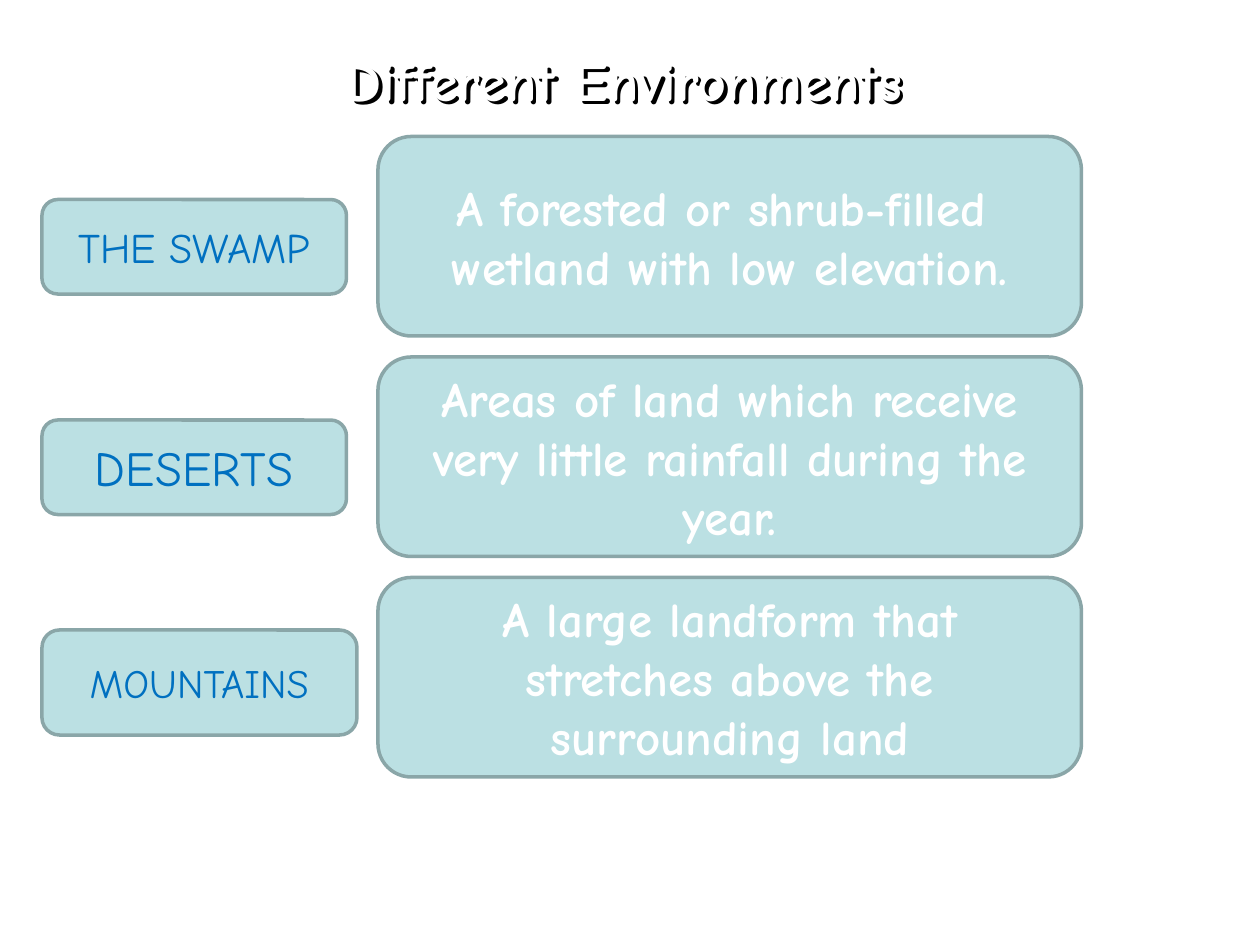
from typing import NamedTuple

from lxml.etree import SubElement
from pptx import Presentation
from pptx.dml.color import RGBColor
from pptx.enum.shapes import MSO_SHAPE as Shape
from pptx.enum.text import MSO_ANCHOR as Anchor, PP_ALIGN as Align
from pptx.oxml.ns import qn
from pptx.util import Pt

FONT = "Comic Neue"
WHITE, BLACK, BLUE, TEAL, EDGE = "FFFFFF", "000000", "0070C0", "BBE0E3", "8AA6A8"
CARD_TOP, CARD_STEP = 78, 126


class Environment(NamedTuple):
    name: str
    size: float
    top: float
    width: float
    height: float
    lines: list[str]


ENVIRONMENTS = [
    Environment("THE SWAMP", 24, 114, 174, 54,
                ["A forested or shrub-filled ", "wetland with low elevation."]),
    Environment("DESERTS", 28, 240, 174, 54,
                ["Areas of land which receive very little rainfall during the year."]),
    Environment("MOUNTAINS", 23, 360, 180, 60,
                ["A large landform that stretches above the surrounding land"]),
]


def rgb(value: str) -> RGBColor:
    return RGBColor.from_string(value)


def add_text(p, text: str, *, size: float, color: str, bold: bool = False) -> None:
    p.alignment = Align.CENTER
    r = p.add_run()
    r.text = text
    r.font.name = FONT
    r.font.size = Pt(size)
    r.font.bold = bold
    r.font.color.rgb = rgb(color)


def add_shadow(sp, color: str, distance: float) -> None:
    sp.fill.background()
    sp.shadow.inherit = False
    effects = sp.element.spPr.find(qn("a:effectLst"))
    outer = SubElement(effects, qn("a:outerShdw"), dist=str(Pt(distance)),
                       dir="2700000", algn="ctr", rotWithShape="0")
    SubElement(outer, qn("a:srgbClr"), val=color)


def add_box(s, left: float, top: float, width: float, height: float,
            lines: list[str], **text_format) -> None:
    sp = s.shapes.add_shape(Shape.ROUNDED_RECTANGLE, Pt(left), Pt(top),
                            Pt(width), Pt(height))
    sp.shadow.inherit = False
    sp.fill.solid()
    sp.fill.fore_color.rgb = rgb(TEAL)
    sp.line.color.rgb = rgb(EDGE)
    sp.line.width = Pt(2)
    tf = sp.text_frame
    tf.word_wrap = True
    tf.vertical_anchor = Anchor.MIDDLE
    for i, line in enumerate(lines):
        p = tf.add_paragraph() if i else tf.paragraphs[0]
        add_text(p, line, **text_format)


def add_title(s, text: str) -> None:
    sp = s.shapes.title
    sp.left, sp.top, sp.width, sp.height = Pt(12), Pt(18), Pt(690), Pt(54)
    add_shadow(sp, BLACK, 2.8)
    tf = sp.text_frame
    tf.vertical_anchor = Anchor.MIDDLE
    add_text(tf.paragraphs[0], text, size=32, color=WHITE, bold=True)


def main() -> None:
    prs = Presentation()
    prs.slide_width, prs.slide_height = Pt(720), Pt(540)
    s = prs.slides.add_slide(prs.slide_layouts[5])
    s.background.fill.solid()
    s.background.fill.fore_color.rgb = rgb(WHITE)
    add_title(s, "Different Environments")
    for env in ENVIRONMENTS:
        add_box(s, 24, env.top, env.width, env.height, [env.name],
                size=env.size, color=BLUE)
    for i, env in enumerate(ENVIRONMENTS):
        add_box(s, 216, CARD_TOP + i * CARD_STEP, 402, 114, env.lines,
                size=28, color=WHITE, bold=True)
    prs.save("out.pptx")


if __name__ == "__main__":
    main()
